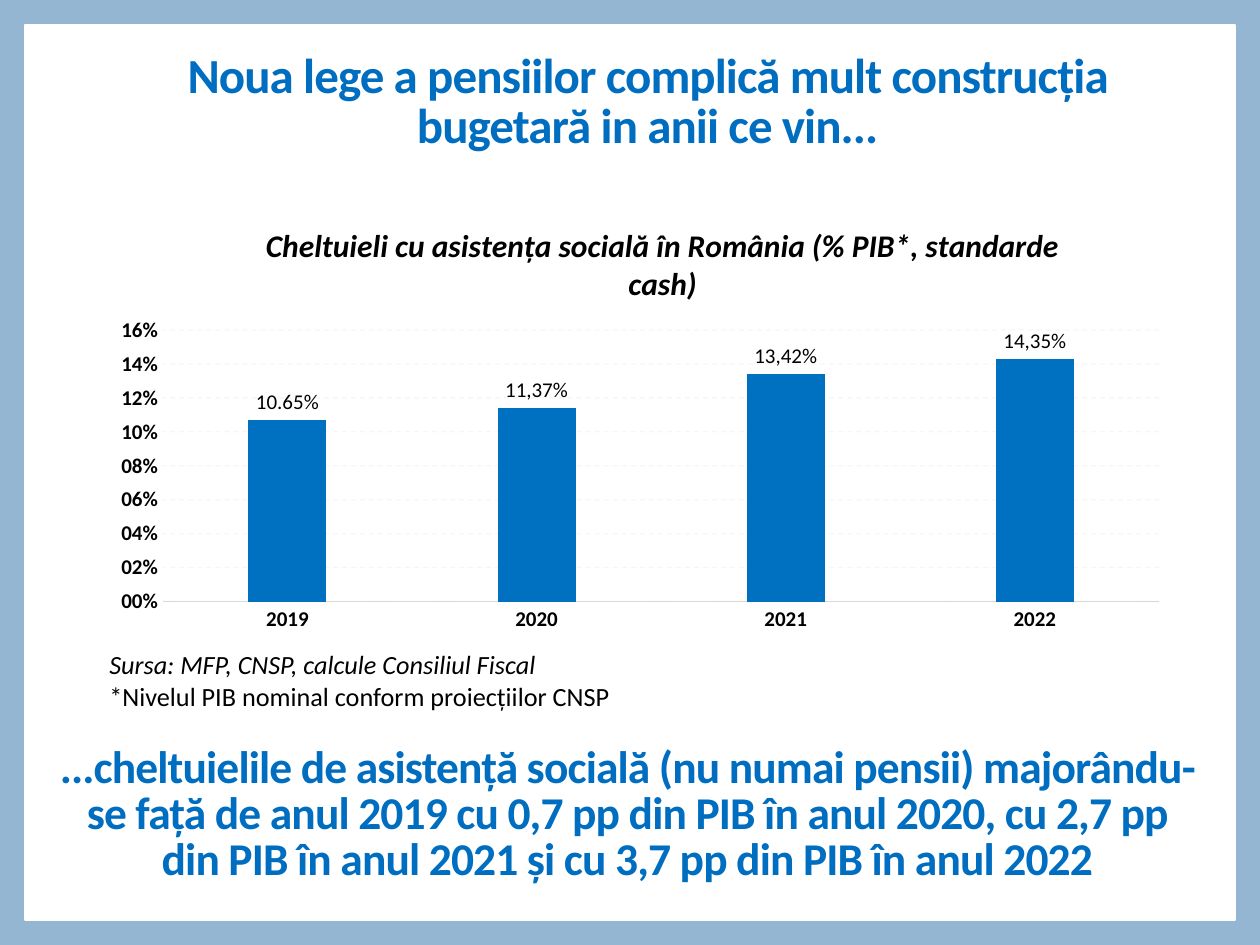
from lxml import etree
from pptx import Presentation, util as u
from pptx.chart.data import CategoryChartData
from pptx.dml.color import RGBColor
from pptx.enum import chart as ch, dml, shapes, text
from pptx.oxml import parse_xml
from pptx.oxml.ns import nsdecls, qn

PX = 914400 // 126
HUES = {"edge": "94B6D2", "page": "FFFFFF", "head": "006EC0", "bar": "0070C0",
        "ink": "000000", "axis": "D9D9D9", "grid": "E6DEDB"}
HUES = {key: RGBColor.from_string(val) for key, val in HUES.items()}


def style(font, size, hue="ink", **form):
    form = {"name": "Calibri", "size": u.Pt(size), **form}
    for key, val in form.items():
        setattr(font, key, val)
    font.color.rgb = HUES[hue]


def place(node, **parts):
    """Build a manual chart layout from fractions of the chart's size."""
    inner = '<c:layoutTarget val="inner"/>' if "w" in parts else ""
    modes = "".join(f'<c:{key}Mode val="edge"/>' for key in "xy")
    sizes = "".join(f'<c:{key} val="{val}"/>' for key, val in parts.items())
    for old in node.findall(qn("c:layout")):
        node.remove(old)
    new = parse_xml(f'<c:layout {nsdecls("c")}><c:manualLayout>{inner}{modes}{sizes}'
                    '</c:manualLayout></c:layout>')
    if "w" in parts:
        node.insert(0, new)
    else:
        node.find(qn("c:tx")).addnext(new)


prs = Presentation()
prs.slide_width, prs.slide_height = 1260 * PX, 945 * PX
slide = prs.slides.add_slide(prs.slide_layouts[6])
back = slide.background.fill
back.solid()
back.fore_color.rgb = HUES["edge"]

# White page inside the blue frame
page = slide.shapes.add_shape(shapes.MSO_SHAPE.RECTANGLE,
                              *(n * PX for n in (25, 25, 1210, 895)))
page.shadow.inherit = False
page.fill.solid()
page.fill.fore_color.rgb = page.line.color.rgb = HUES["page"]
page.line.width = u.Pt(1)

# Column chart; the labels are typed by hand
data = CategoryChartData()
data.categories = ["2019", "2020", "2021", "2022"]
data.add_series("Series 1", [0.107, 0.114, 0.134, 0.143])
box = [n * PX for n in (98, 205, 1081, 436)]
chart = slide.shapes.add_chart(ch.XL_CHART_TYPE.COLUMN_CLUSTERED, *box, data).chart
chart.has_legend = False
style(chart.font, 10, bold=True)

chart.has_title = True
title = chart.chart_title.text_frame
title.text = "Cheltuieli cu asistența socială în România (% PIB*, standarde cash)"
style(title.paragraphs[0].runs[0].font, 18, bold=True, italic=True)
place(chart.chart_title._element, x=0.15, y=0.03)
place(chart.plots[0]._element.getparent(), x=0.06, y=0.287, w=0.922, h=0.623)

cats, vals = chart.category_axis, chart.value_axis
for axis in (cats, vals):
    axis.major_tick_mark = axis.minor_tick_mark = ch.XL_TICK_MARK.NONE
    style(axis.tick_labels.font, 12, bold=True)
cats.format.line.color.rgb = HUES["axis"]
cats.format.line.width = u.Pt(0.75)
vals.format.line.fill.background()
vals.minimum_scale, vals.maximum_scale, vals.major_unit = 0, 0.16, 0.02
vals.tick_labels.number_format = "#,#00%"
vals.tick_labels.number_format_is_linked = False
grid = vals.major_gridlines.format.line
grid.color.rgb = HUES["grid"]
grid.width = u.Pt(0.75)
grid.dash_style = dml.MSO_LINE.DASH
hue = vals._element.find(qn("c:majorGridlines")).find(".//" + qn("a:srgbClr"))
etree.SubElement(hue, qn("a:alpha")).set("val", "25000")

plot = chart.plots[0]
plot.gap_width, plot.overlap, plot.vary_by_categories = 219, -27, False
bars = plot.series[0]
bars.format.fill.solid()
bars.format.fill.fore_color.rgb = HUES["bar"]
for i, word in enumerate(["10.65%", "11,37%", "13,42%", "14,35%"]):
    label = bars.points[i].data_label
    label.text_frame.text = word
    style(label.text_frame.paragraphs[0].runs[0].font, 12, bold=False)
    label.position = ch.XL_LABEL_POSITION.OUTSIDE_END

# Text: box, alignment, size, colour, then words, line spacing and format of each line
head = {"bold": True}
mid, just = text.PP_ALIGN.CENTER, text.PP_ALIGN.JUSTIFY
blocks = [
    ((97, 640, 998, 78), just, 15, "ink", [
        ("Sursa: MFP, CNSP, calcule Consiliul Fiscal", 1.07, {"italic": True}),
        ("*Nivelul PIB nominal conform proiecțiilor CNSP", 1.0, {})]),
    ((87, 47, 1121, 131), mid, 28, "head", [
        ("Noua lege a pensiilor complică mult construcția bugetară in anii ce vin...",
         0.85, head)]),
    ((42, 740, 1171, 142), mid, 26, "head", [
        ("...cheltuielile de asistență socială (nu numai pensii) majorându-se față de anul "
         "2019 cu 0,7 pp din PIB în anul 2020, cu 2,7 pp din PIB în anul 2021 și cu 3,7 pp "
         "din PIB în anul 2022", 0.85, head)]),
]
for box, align, size, hue, lines in blocks:
    frame = slide.shapes.add_textbox(*(n * PX for n in box)).text_frame
    frame.word_wrap = True
    for i, (word, gap, form) in enumerate(lines):
        para = frame.add_paragraph() if i else frame.paragraphs[0]
        para.alignment, para.line_spacing = align, gap
        run = para.add_run()
        run.text = word
        style(run.font, size, hue, **form)
        if form is head:
            run.font._element.set("spc", "-50")

prs.save("out.pptx")
